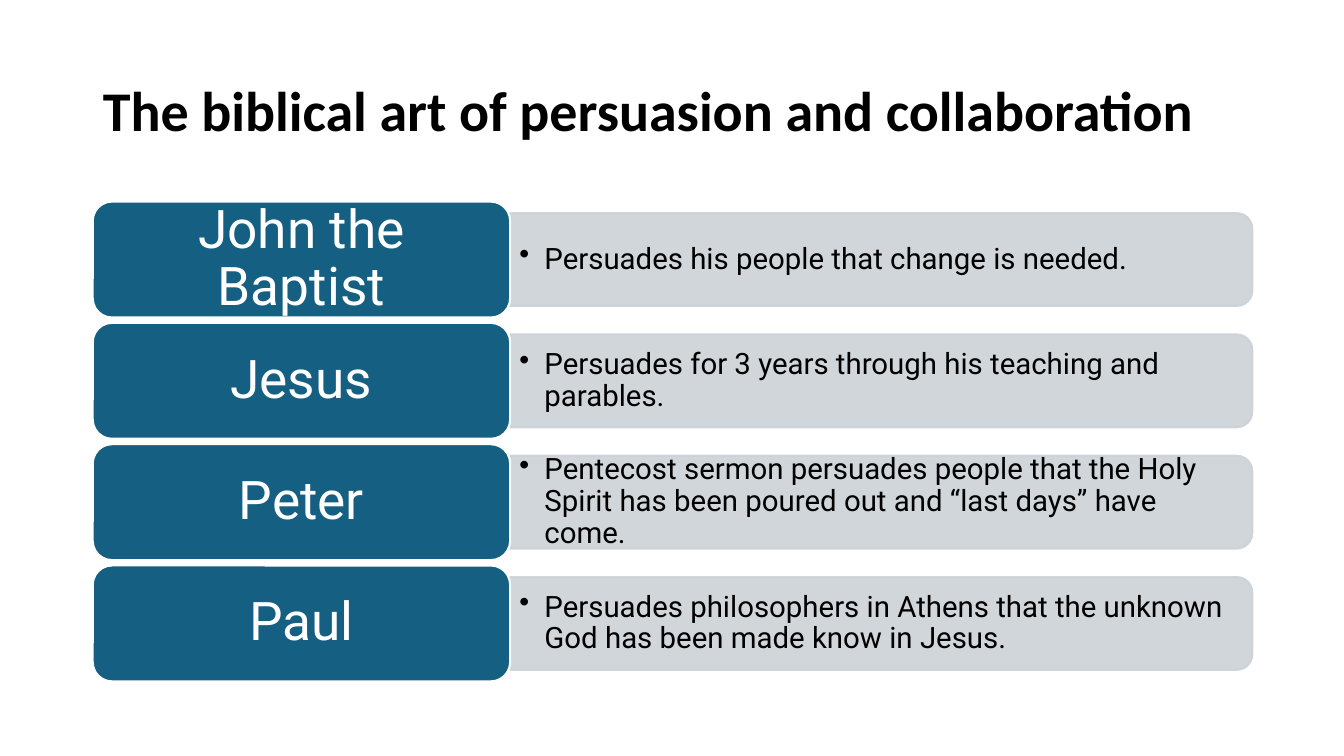
from lxml import etree
from pptx import Presentation
from pptx.dml.color import RGBColor
from pptx.enum.shapes import MSO_SHAPE
from pptx.enum.text import MSO_ANCHOR, MSO_AUTO_SIZE, PP_ALIGN
from pptx.oxml.ns import qn
from pptx.util import Inches, Pt

TITLE = "The biblical art of persuasion and collaboration"
PERSUADERS = [
    ("John the Baptist", "Persuades his people that change is needed."),
    ("Jesus", "Persuades for 3 years through his teaching and parables."),
    ("Peter", "Pentecost sermon persuades people that the Holy Spirit has been "
              "poured out and “last days” have come."),
    ("Paul", "Persuades philosophers in Athens that the unknown God has been "
             "made know in Jesus."),
]

BLACK = RGBColor(0x00, 0x00, 0x00)
WHITE = RGBColor(0xFF, 0xFF, 0xFF)
BLUE = RGBColor(0x15, 0x60, 0x82)
GREY = RGBColor(0xCC, 0xD2, 0xD8)

ROUNDED = MSO_SHAPE.ROUNDED_RECTANGLE
ROUND_TOP = MSO_SHAPE.ROUND_2_SAME_RECTANGLE
MIDDLE = MSO_ANCHOR.MIDDLE
NO_FIT = MSO_AUTO_SIZE.NONE
LEFT, CENTER = PP_ALIGN.LEFT, PP_ALIGN.CENTER

MARGIN = 0.92
FIRST_TOP, ROW_PITCH = 2.0, 1.2033
NAME_W, NAME_H = 4.14, 1.15
DEED_W, DEED_H = 7.36, 0.92
DEED_TEXT_W, DEED_TEXT_H = 7.32, 0.83
DEED_LEFT = MARGIN + NAME_W


def add_box(slide, preset, left, top, width, height, fill, line):
    box = slide.shapes.add_shape(preset, Inches(left), Inches(top),
                                 Inches(width), Inches(height))
    box.shadow.inherit = False
    box.fill.solid()
    box.fill.fore_color.rgb = fill
    box.line.color.rgb = line
    box.line.width = Pt(1.5)
    return box


def write(shape, text, size, color, align, inset_x, inset_y, font="Roboto", bullet=False):
    frame = shape.text_frame
    frame.word_wrap = True
    frame.auto_size = NO_FIT
    frame.vertical_anchor = MIDDLE
    frame.margin_left = frame.margin_right = Inches(inset_x)
    frame.margin_top = frame.margin_bottom = Inches(inset_y)
    frame.text = text
    paragraph = frame.paragraphs[0]
    paragraph.alignment = align
    paragraph.line_spacing = 0.9
    if bullet:
        properties = paragraph._p.get_or_add_pPr()
        properties.set("marL", str(Inches(0.25)))
        properties.set("indent", str(-Inches(0.25)))
        etree.SubElement(properties, qn("a:buChar"), char="•")
    paragraph.font.name = font
    paragraph.font.size = Pt(size)
    paragraph.font.color.rgb = color
    return paragraph


def add_deed(slide, deed, middle):
    center = DEED_LEFT + DEED_W / 2
    panel = add_box(slide, ROUND_TOP, center - DEED_H / 2, middle - DEED_W / 2,
                    DEED_H, DEED_W, GREY, GREY)
    panel.rotation = 90
    for color in panel._element.spPr.iter(qn("a:srgbClr")):
        etree.SubElement(color, qn("a:alpha"), val="90000")
    words = slide.shapes.add_textbox(
        Inches(DEED_LEFT), Inches(middle - DEED_TEXT_H / 2),
        Inches(DEED_TEXT_W), Inches(DEED_TEXT_H))
    write(words, deed, 21, BLACK, LEFT, 0.09, 0.04, bullet=True)


def main():
    deck = Presentation()
    deck.slide_width, deck.slide_height = Inches(13.33), Inches(7.5)
    slide = deck.slides.add_slide(deck.slide_layouts[5])

    title = slide.shapes.title
    title.left, title.top = Inches(MARGIN), Inches(0.4)
    title.width, title.height = Inches(11.5), Inches(1.45)
    write(title, TITLE, 40, BLACK, LEFT, 0.1, 0.05, font="Calibri").font.bold = True

    for row, (name, deed) in enumerate(PERSUADERS):
        top = FIRST_TOP + row * ROW_PITCH
        add_deed(slide, deed, top + NAME_H / 2)
        label = add_box(slide, ROUNDED, MARGIN, top, NAME_W, NAME_H, BLUE, WHITE)
        write(label, name, 38, WHITE, CENTER, 0.21, 0.13)

    deck.save("out.pptx")


if __name__ == "__main__":
    main()
